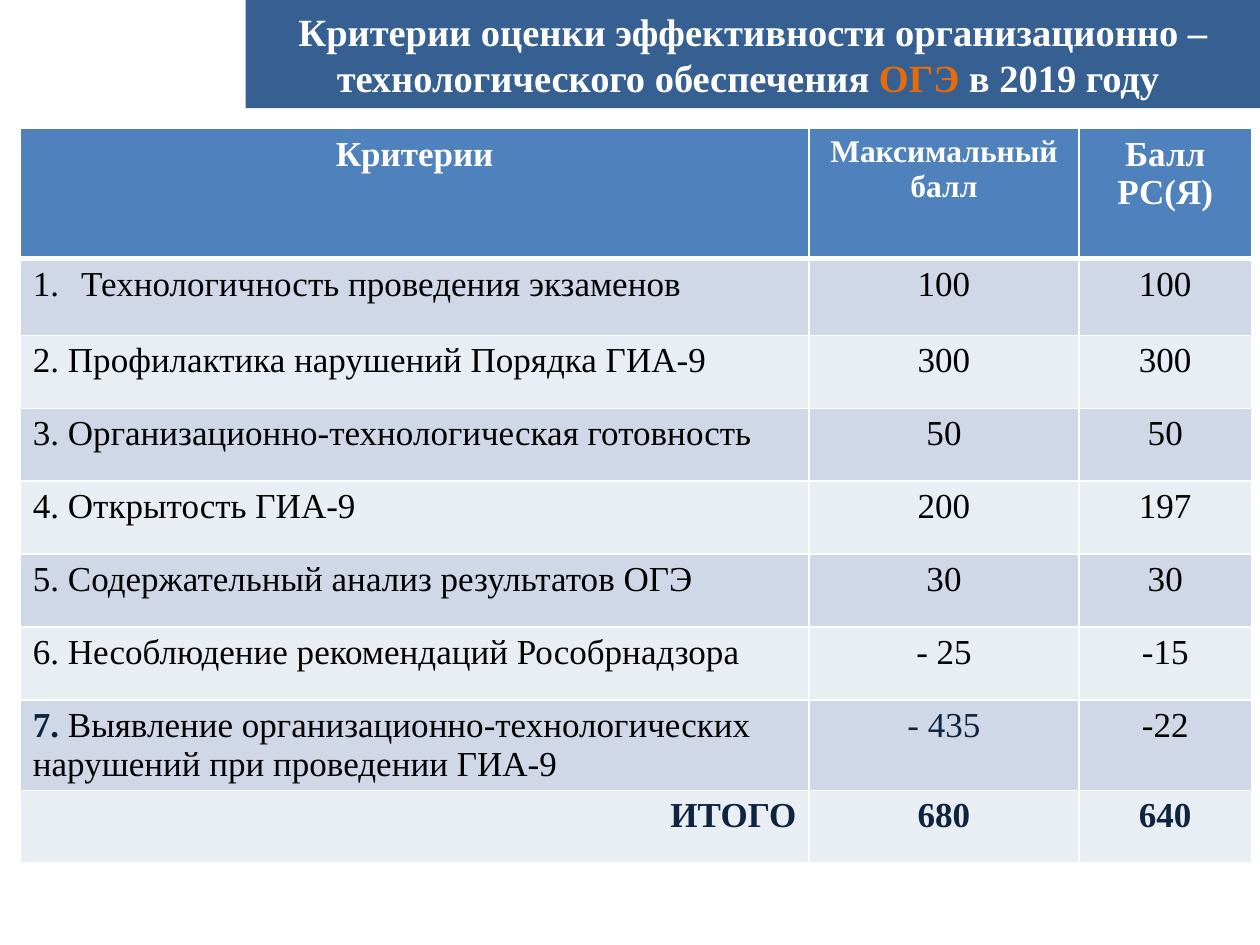
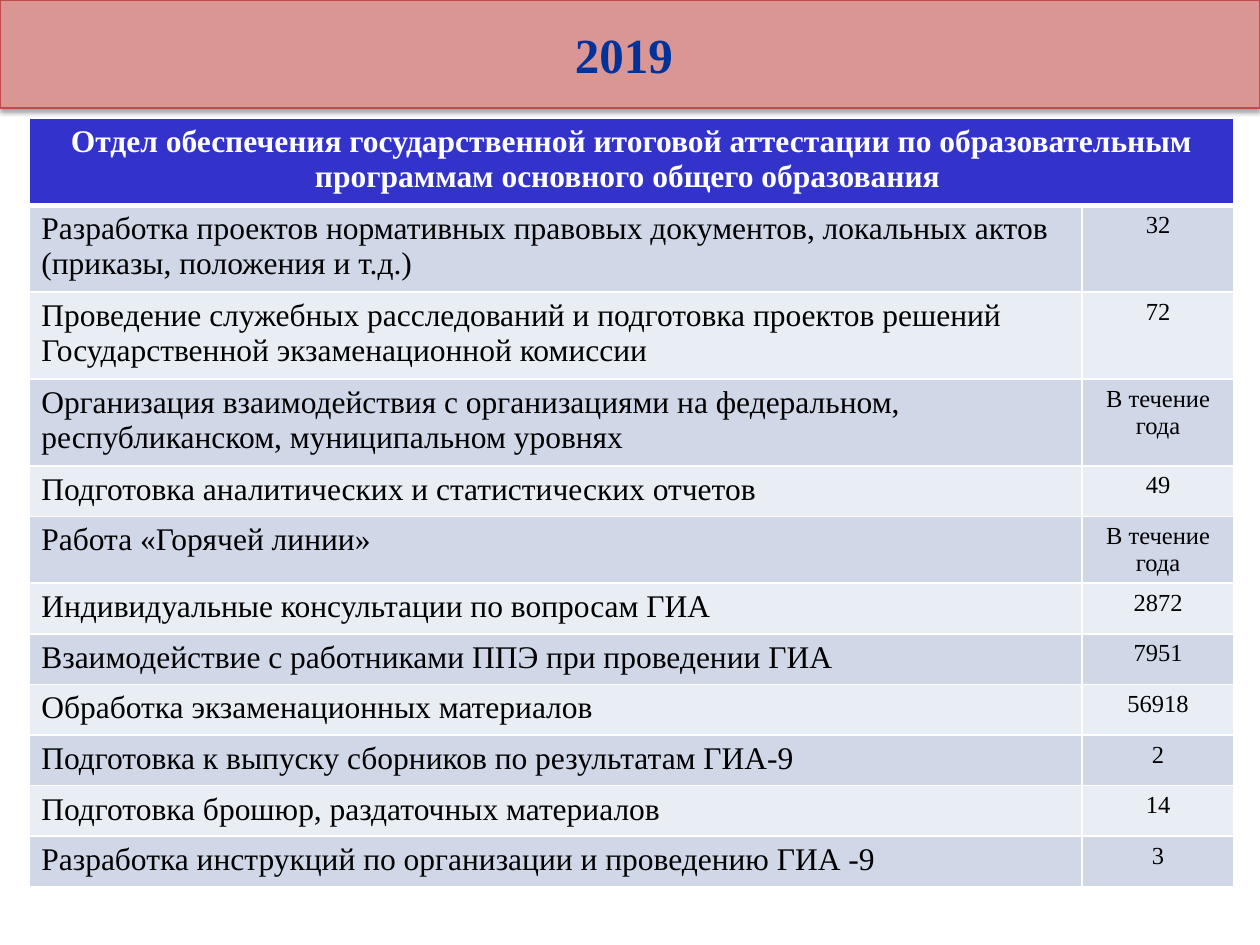
from dataclasses import dataclass

from pptx import Presentation
from pptx.dml.color import RGBColor
from pptx.enum.shapes import MSO_SHAPE as Shape
from pptx.enum.text import MSO_ANCHOR as Anchor, PP_ALIGN as Align
from pptx.oxml import parse_xml
from pptx.oxml.ns import nsdecls
from pptx.util import Cm, Pt


@dataclass(frozen=True)
class Theme:
    font: str = "Times New Roman"
    white: str = "FFFFFF"
    black: str = "000000"
    navy: str = "0F243E"
    orange: str = "E46C0A"
    title_blue: str = "376092"
    year_blue: str = "003399"
    rose: str = "D99694"
    rose_edge: str = "BF4C48"
    criteria_head: str = "4F81BD"
    work_head: str = "3333CC"
    bands: tuple = ("D0D8E8", "E9EDF4")
    year_size: int = 28
    title_size: int = 22
    large: int = 20
    medium: int = 18
    small: int = 14
    thin: int = 1
    thick: int = 3
    title_height: float = 2.18


THEME = Theme()
LEFT, CENTER, RIGHT = Align.LEFT, Align.CENTER, Align.RIGHT

HEAD = {"size": THEME.large, "color": THEME.white, "bold": True}
BODY = {"size": THEME.large, "color": THEME.black, "bold": False}
TOTAL = BODY | {"color": THEME.navy, "bold": True}
TITLE = HEAD | {"size": THEME.title_size}

# Criteria: name, highest score, score of the republic
CRITERIA = [
    ("Технологичность проведения экзаменов", "100", "100"),
    ("2. Профилактика нарушений Порядка ГИА-9", "300", "300"),
    ("3. Организационно-технологическая готовность", "50", "50"),
    ("4. Открытость ГИА-9", "200", "197"),
    ("5. Содержательный анализ результатов ОГЭ", "30", "30"),
    ("6. Несоблюдение рекомендаций Рособрнадзора", "- 25", "-15"),
    ([("7.", TOTAL),
      (" Выявление организационно-технологических нарушений при проведении ГИА-9", BODY)],
     [("- 435", BODY | {"color": THEME.navy})], "-22"),
]

# Work of the department: task and amount
WORK = [
    ("Разработка проектов нормативных правовых документов, локальных актов "
     "(приказы, положения и т.д.)", "32"),
    ("Проведение служебных расследований и подготовка проектов решений "
     "Государственной экзаменационной комиссии", "72"),
    ("Организация взаимодействия с организациями на федеральном, "
     "республиканском, муниципальном уровнях", "В течение года"),
    ("Подготовка аналитических и статистических отчетов", "49"),
    ("Работа «Горячей линии»", "В течение года"),
    ("Индивидуальные консультации по вопросам ГИА", "2872"),
    ("Взаимодействие с работниками ППЭ при проведении ГИА", "7951"),
    ("Обработка экзаменационных материалов", "56918"),
    ("Подготовка к выпуску сборников по результатам ГИА-9", "2"),
    ("Подготовка брошюр, раздаточных материалов", "14"),
    ("Разработка инструкций по организации и проведению ГИА -9", "3"),
]


def write(para, content, look, align):
    """Fill a paragraph with plain text or with (text, look) spans."""
    para.alignment = align
    spans = [(content, look)] if isinstance(content, str) else content
    for text, span_look in spans:
        span = para.add_run()
        span.text = text
        span.font.color.rgb = RGBColor.from_string(span_look["color"])
        settings = {"name": THEME.font, "size": Pt(span_look["size"]),
                    "bold": span_look["bold"]}
        for name, value in settings.items():
            setattr(span.font, name, value)


def number(para, indent):
    """Give a paragraph automatic numbering with a hanging indent."""
    properties = para._p.get_or_add_pPr()
    properties.set("marL", str(indent))
    properties.set("indent", str(-indent))
    properties.append(parse_xml(
        f'<a:buAutoNum {nsdecls("a")} type="arabicPeriod"/>'))


def add_title(page, left, width, fill, content, look, edge=None):
    """Draw the title band at the top of a page."""
    box = page.shapes.add_shape(
        Shape.RECTANGLE, Cm(left), 0, Cm(width), Cm(THEME.title_height))
    box.shadow.inherit = False
    box.fill.solid()
    box.fill.fore_color.rgb = RGBColor.from_string(fill)
    if edge:
        box.line.color.rgb = RGBColor.from_string(edge)
        box.line.width = Pt(0.75)
    else:
        box.line.fill.background()
    box.text_frame.word_wrap = True
    box.text_frame.vertical_anchor = Anchor.MIDDLE
    write(box.text_frame.paragraphs[0], content, look, CENTER)
    return box


def add_shadow(box):
    """Cast a soft shadow straight down."""
    effects = box._element.spPr.find(
        "{http://schemas.openxmlformats.org/drawingml/2006/main}effectLst")
    effects.append(parse_xml(
        f'<a:outerShdw {nsdecls("a")} blurRad="{Pt(3.1)}" dist="{Pt(1.6)}" '
        f'dir="5400000" rotWithShape="0"><a:srgbClr val="{THEME.black}">'
        '<a:alpha val="38000"/></a:srgbClr></a:outerShdw>'))


def style_cell(cell, fill, row):
    """Set white borders, thick under the heading row, and the fill."""
    widths = {"L": THEME.thin, "R": THEME.thin,
              "T": THEME.thick if row == 1 else THEME.thin,
              "B": THEME.thick if row == 0 else THEME.thin}
    properties = cell._tc.get_or_add_tcPr()
    for side, width in widths.items():
        properties.append(parse_xml(
            f'<a:ln{side} {nsdecls("a")} w="{Pt(width)}"><a:solidFill>'
            f'<a:srgbClr val="{THEME.white}"/></a:solidFill></a:ln{side}>'))
    cell.fill.solid()
    cell.fill.fore_color.rgb = RGBColor.from_string(fill)


def add_grid(page, left, top, widths, heights, head_fill):
    """Add an empty table with a heading row and alternating bands."""
    table = page.shapes.add_table(
        len(heights), len(widths), Cm(left), Cm(top),
        Cm(sum(widths)), Cm(sum(heights))).table
    table.first_row = table.horz_banding = False
    for column, width in zip(table.columns, widths):
        column.width = Cm(width)
    for index, (row, height) in enumerate(zip(table.rows, heights)):
        row.height = Cm(height)
        fill = THEME.bands[(index - 1) % 2] if index else head_fill
        for cell in row.cells:
            style_cell(cell, fill, index)
    return table


def fill_row(table, row, contents, looks, aligns):
    """Write one row, with a look and an alignment for each column."""
    for column, (content, look, align) in enumerate(zip(contents, looks, aligns)):
        para = table.cell(row, column).text_frame.paragraphs[0]
        write(para, content, look, align)


def build_criteria(page):
    heights = [2.62, 1.55] + [1.47] * 7
    table = add_grid(page, 0.41, 2.59, [15.9, 5.44, 3.48], heights,
                     THEME.criteria_head)
    fill_row(table, 0, ("Критерии", "Максимальный балл", "Балл РС(Я)"),
             (HEAD, HEAD | {"size": THEME.medium}, HEAD), [CENTER] * 3)
    for row, contents in enumerate(CRITERIA, 1):
        fill_row(table, row, contents, [BODY] * 3, (LEFT, CENTER, CENTER))
    number(table.cell(1, 0).text_frame.paragraphs[0], Cm(0.97))
    fill_row(table, len(heights) - 1, ("ИТОГО", "680", "640"),
             [TOTAL] * 3, (RIGHT, CENTER, CENTER))

    title = [
        ("Критерии оценки эффективности организационно –"
         "технологического обеспечения ", TITLE),
        ("ОГЭ", TITLE | {"color": THEME.orange}),
        (" в 2019 году ", TITLE),
    ]
    add_title(page, 4.95, 20.45, THEME.title_blue, title, TITLE)


def build_work(page):
    heights = [1.75] * 4 + [1.02, 1.17] + [1.02] * 6
    table = add_grid(page, 0.58, 2.39, [21.23, 3.07], heights, THEME.work_head)
    table.cell(0, 0).merge(table.cell(0, 1))
    heading = ("Отдел обеспечения государственной итоговой аттестации по "
               "образовательным программам основного общего образования ")
    fill_row(table, 0, [heading], [HEAD | {"size": THEME.medium}], [CENTER])
    looks = [BODY | {"size": size} for size in (THEME.medium, THEME.small)]
    for row, contents in enumerate(WORK, 1):
        fill_row(table, row, contents, looks, (LEFT, CENTER))

    year = {"size": THEME.year_size, "color": THEME.year_blue, "bold": True}
    box = add_title(page, 0, 25.4, THEME.rose, "2019 ", year, THEME.rose_edge)
    box.text_frame.paragraphs[0].space_before = Pt(4)
    add_shadow(box)


def main():
    deck = Presentation()
    deck.slide_width, deck.slide_height = Cm(25.4), Cm(19.05)
    blank = deck.slide_layouts[6]
    for build in (build_criteria, build_work):
        build(deck.slides.add_slide(blank))
    deck.save("out.pptx")


if __name__ == "__main__":
    main()
